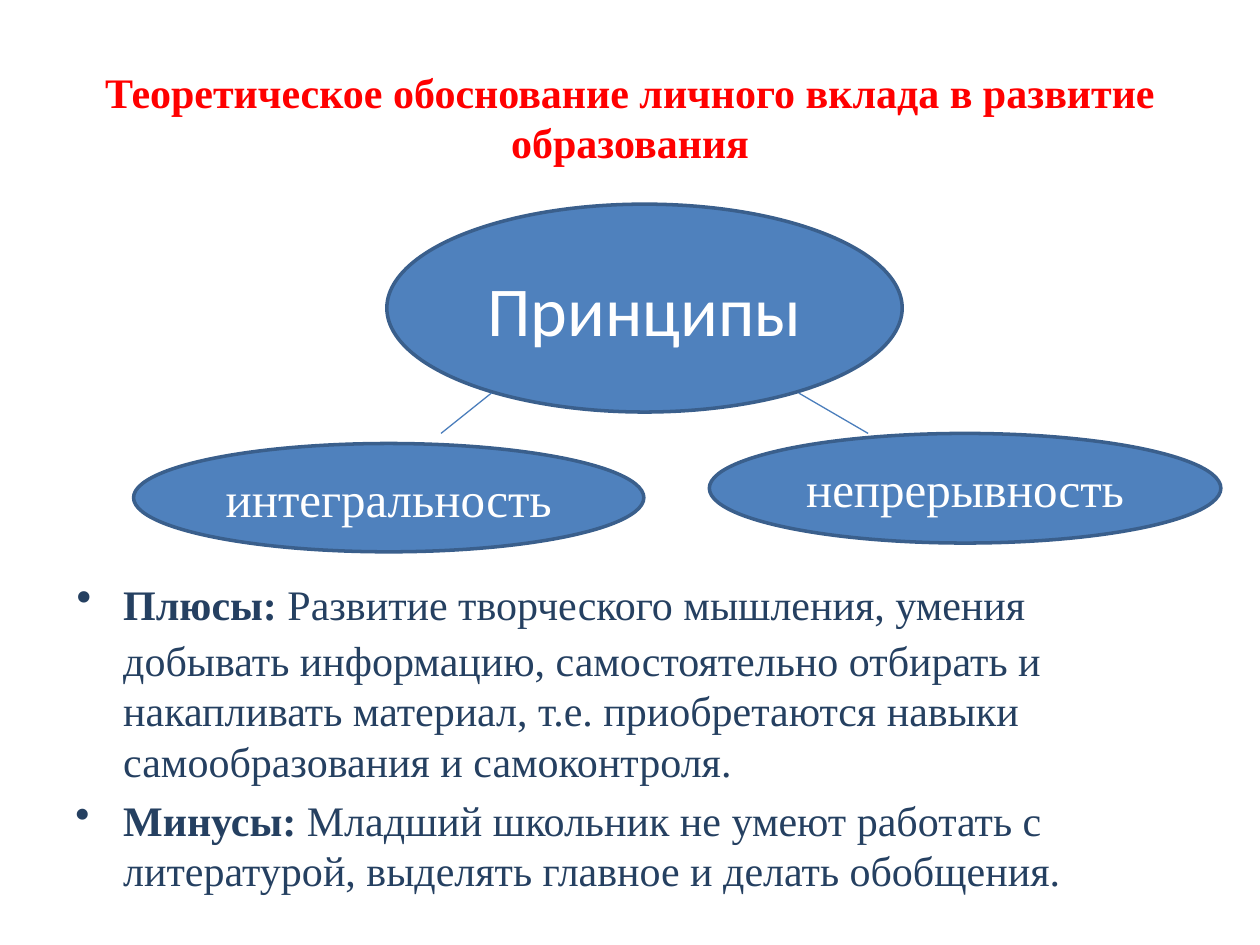
from lxml import etree
from pptx import Presentation
from pptx.dml.color import RGBColor
from pptx.enum.shapes import MSO_CONNECTOR, MSO_SHAPE
from pptx.enum.text import MSO_ANCHOR, PP_ALIGN
from pptx.oxml.ns import qn
from pptx.util import Inches, Pt

OVAL, STRAIGHT = MSO_SHAPE.OVAL, MSO_CONNECTOR.STRAIGHT
MIDDLE, TOP = MSO_ANCHOR.MIDDLE, MSO_ANCHOR.TOP
CENTER, LEFT = PP_ALIGN.CENTER, PP_ALIGN.LEFT
RED = RGBColor(0xFF, 0x00, 0x00)
NAVY = RGBColor(0x25, 0x40, 0x61)
BLUE = RGBColor(0x4F, 0x81, 0xBD)
OUTLINE = RGBColor(0x3A, 0x5F, 0x8C)
LINK = RGBColor(0x4B, 0x7E, 0xBC)
WHITE = RGBColor(0xFF, 0xFF, 0xFF)
SERIF, SANS = "Times New Roman", "Calibri"

# Content: places are left, top, width, height in inches
WIDTH, HEIGHT = 10, 7.5
MARGIN, HANGING = WIDTH * 0.05, 0.38
COLUMN = WIDTH - 2 * MARGIN
TITLE = "Теоретическое обоснование личного вклада в развитие образования"
ELLIPSES = [
    ("Принципы", (3.07, 1.62, 4.09, 1.65), SANS, 40),
    ("интегральность", (1.06, 3.52, 4.05, 0.86), SERIF, 28),
    ("непрерывность", (5.63, 3.44, 4.06, 0.87), SERIF, 28),
]
LINKS = [((6.34, 3.12), (6.89, 3.44)), ((3.9, 3.12), (3.5, 3.44))]
# Each point: bullet character, whether it is a large typed mark, label, text
POINTS = [
    ("∙", True, "Плюсы: ",
     "Развитие творческого мышления, умения добывать информацию, "
     "самостоятельно отбирать и накапливать материал, т.е. приобретаются "
     "навыки самообразования и самоконтроля."),
    ("•", False, "Минусы: ",
     "Младший школьник не умеют работать с литературой, "
     "выделять главное и делать обобщения."),
]


def add_run(paragraph, text, font, size, color, bold=False):
    run = paragraph.add_run()
    run.text = text
    values = {"name": font, "size": Pt(size), "bold": bold}
    for name, value in values.items():
        setattr(run.font, name, value)
    run.font.color.rgb = color


def add_text_box(slide, place, anchor):
    frame = slide.shapes.add_textbox(*map(Inches, place)).text_frame
    frame.word_wrap = True
    frame.vertical_anchor = anchor
    return frame


def add_ellipse(slide, text, place, font, size):
    shape = slide.shapes.add_shape(OVAL, *map(Inches, place))
    shape.shadow.inherit = False
    shape.fill.solid()
    shape.fill.fore_color.rgb = BLUE
    shape.line.color.rgb = OUTLINE
    shape.line.width = Pt(2)
    shape.text_frame.vertical_anchor = MIDDLE
    paragraph = shape.text_frame.paragraphs[0]
    paragraph.alignment = CENTER
    add_run(paragraph, text, font, size, WHITE)


def add_link(slide, start, end):
    link = slide.shapes.add_connector(STRAIGHT, *map(Inches, start + end))
    link.line.color.rgb = LINK
    link.line.width = Pt(0.75)
    etree.SubElement(link._element.spPr, qn("a:effectLst"))


def add_point(paragraph, mark, typed, label, text):
    paragraph.alignment = LEFT
    properties = paragraph._p.get_or_add_pPr()
    properties.set("marL", str(Inches(HANGING)))
    properties.set("indent", str(-Inches(HANGING)))
    if typed:
        add_run(paragraph, mark, SERIF, 40, NAVY, True)
        label = "\t" + label
    else:
        etree.SubElement(properties, qn("a:buChar")).set("char", mark)
    add_run(paragraph, label, SERIF, 24, NAVY, True)
    add_run(paragraph, text, SERIF, 24, NAVY)


def main():
    presentation = Presentation()
    presentation.slide_width = Inches(WIDTH)
    presentation.slide_height = Inches(HEIGHT)
    slide = presentation.slides.add_slide(presentation.slide_layouts[6])

    # Title
    title = add_text_box(slide, (MARGIN, 0.3, COLUMN, 1.25), MIDDLE).paragraphs[0]
    title.alignment = CENTER
    add_run(title, TITLE, SERIF, 24, RED, True)

    # Pros and cons
    frame = add_text_box(slide, (MARGIN, 4.32, COLUMN, 2.38), TOP)
    for index, point in enumerate(POINTS):
        paragraph = frame.add_paragraph() if index else frame.paragraphs[0]
        if index:
            paragraph.space_before = Pt(4.8)
        add_point(paragraph, *point)

    # Principles and their links
    for ellipse in ELLIPSES:
        add_ellipse(slide, *ellipse)
    for start, end in LINKS:
        add_link(slide, start, end)

    presentation.save("out.pptx")


if __name__ == "__main__":
    main()
